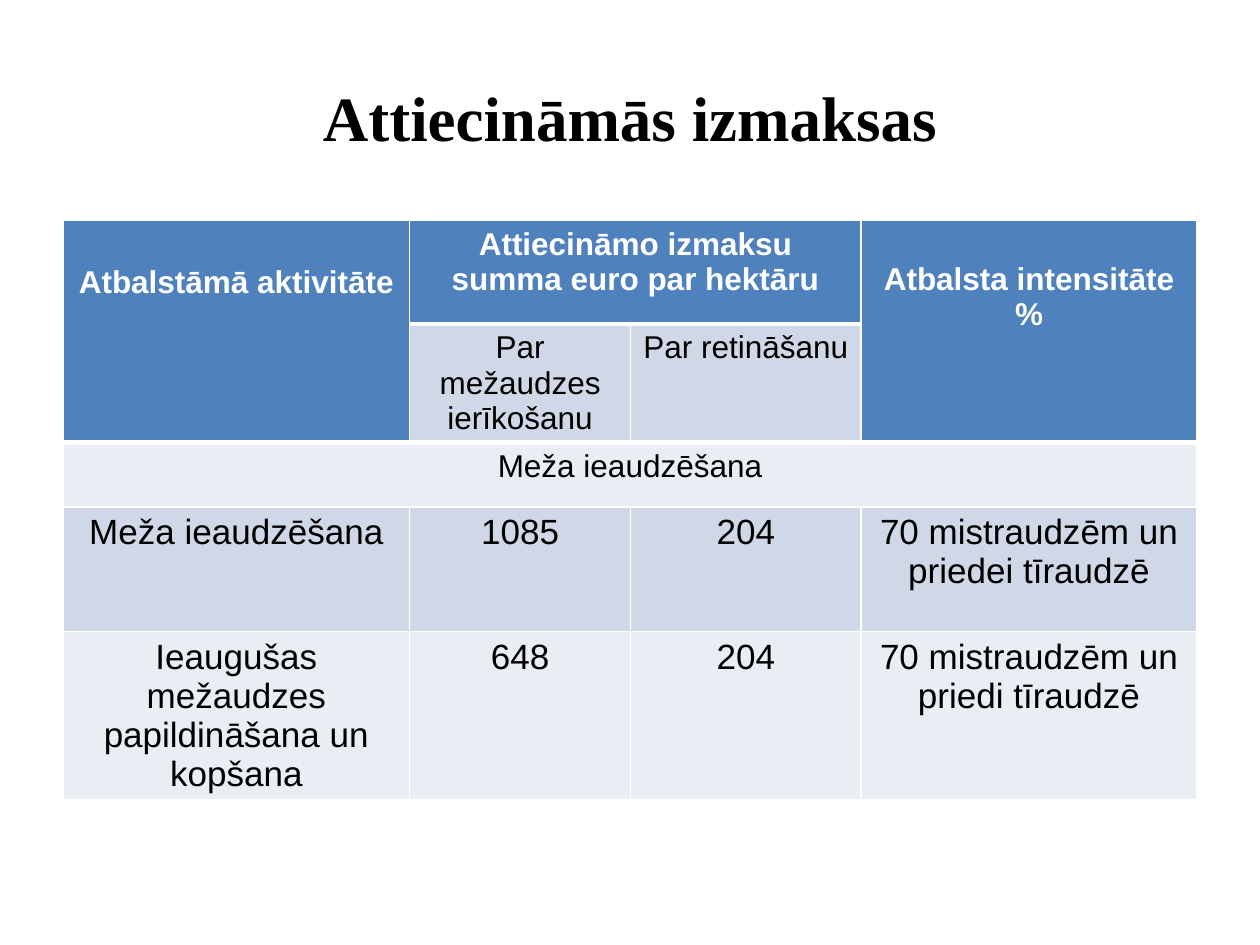
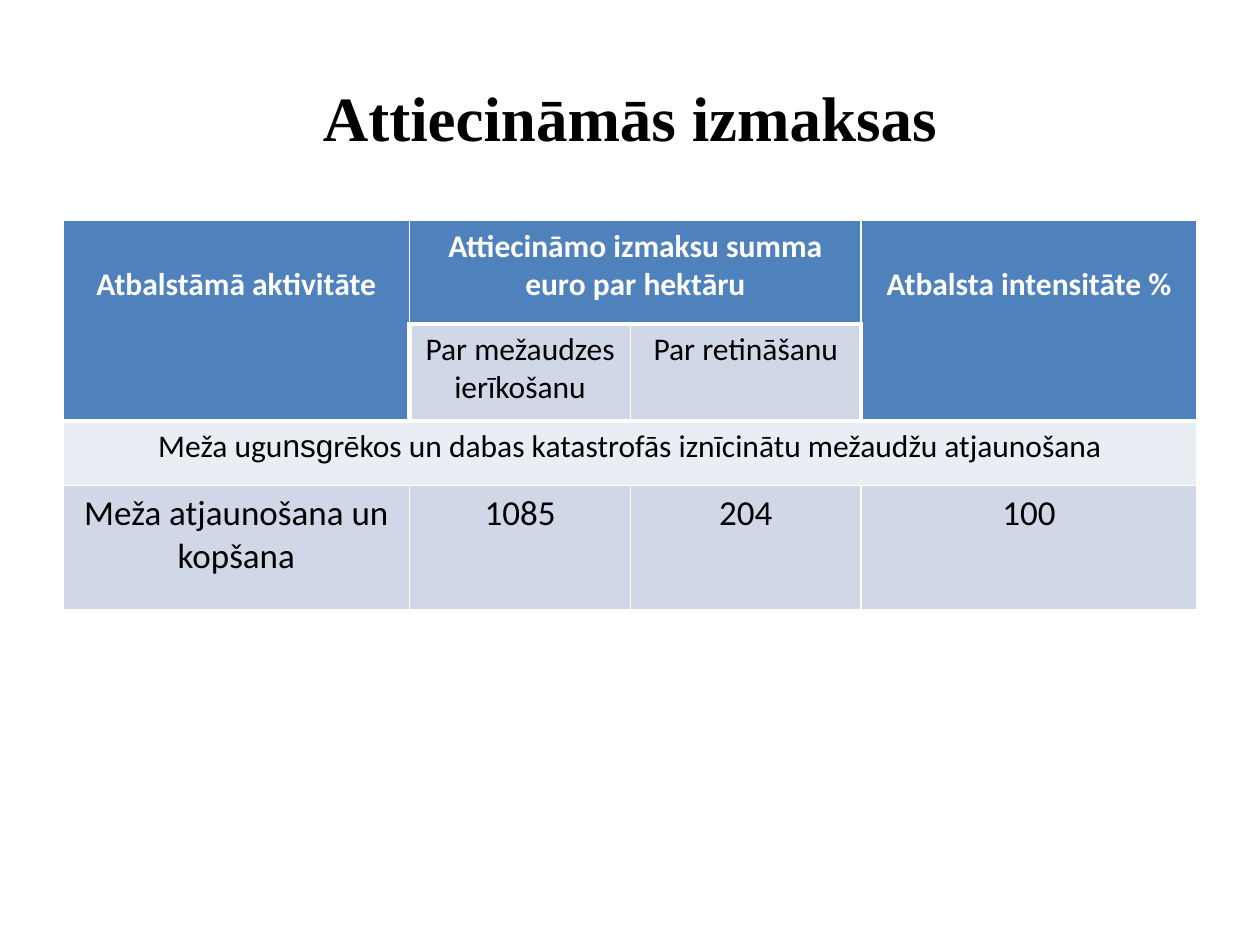
from lxml import etree
from pptx import Presentation
from pptx.dml.color import RGBColor
from pptx.enum.text import MSO_ANCHOR, PP_ALIGN
from pptx.oxml.ns import qn
from pptx.util import Cm, Pt

CENTER, MIDDLE = PP_ALIGN.CENTER, MSO_ANCHOR.MIDDLE

TITLE = "Attiecināmās izmaksas"
HEADINGS = {
    (0, 0): "Atbalstāmā aktivitāte",
    (0, 1): "Attiecināmo izmaksu summa euro par hektāru",
    (0, 3): "Atbalsta intensitāte %",
    (1, 1): "Par mežaudzes ierīkošanu",
    (1, 2): "Par retināšanu",
}
# section is a list of (text, font); activity_rows follow it in the table
COST_TABLES = [
    {
        "font": "Arial",
        "section": [("Meža ieaudzēšana", "Arial")],
        "activity_rows": [
            ("Meža ieaudzēšana", "1085", "204", "70 mistraudzēm un priedei tīraudzē"),
            ("Ieaugušas mežaudzes papildināšana un kopšana", "648", "204",
             "70 mistraudzēm un priedi tīraudzē"),
        ],
        "heading_drop": {0: 0.89, 3: 0.83},
        "thick_sides": False,
    },
    {
        "font": "Calibri",
        "section": [
            ("Meža ugu", "Calibri"),
            ("nsg", "Arial"),
            ("rēkos un dabas katastrofās iznīcinātu mežaudžu atjaunošana", "Calibri"),
        ],
        "activity_rows": [("Meža atjaunošana un kopšana", "1085", "204", "100")],
        "heading_drop": {0: 0.91, 3: 0.91},
        "thick_sides": True,
    },
]

COLORS = {"heading": "4F81BD", "dark_band": "D0D8E8", "light_band": "E9EDF4",
          "white": "FFFFFF", "black": "000000"}
COLUMN_WIDTHS = [6.99, 4.45, 4.65, 6.77]
ROW_HEIGHTS = [2.08, 1.96, 1.3, 2.51, 2.41]
LEFT, WIDTH = 1.27, sum(COLUMN_WIDTHS)
TITLE_TOP, TITLE_HEIGHT, TABLE_TOP = 0.76, 3.18, 4.45
MERGES = [((0, 0), (1, 0)), ((0, 1), (0, 2)), ((0, 3), (1, 3)), ((2, 0), (2, 3))]
SECTION_ROW = 2
THIN, THICK = 1, 3


def write_runs(paragraph, runs, size, color, bold):
    paragraph.alignment = CENTER
    for text, font_name in runs:
        run = paragraph.add_run()
        run.text = text
        for attribute, value in {"name": font_name, "size": Pt(size), "bold": bold}.items():
            setattr(run.font, attribute, value)
        run.font.color.rgb = RGBColor.from_string(COLORS[color])


def is_heading(row, column):
    return row == 0 or (row == 1 and column in (0, 3))


def band_of(row, column):
    if is_heading(row, column):
        return "heading"
    return "dark_band" if row % 2 else "light_band"


def border_widths(row, column, thick_sides):
    """Widths in points, in the order the cell properties need."""
    beside_heading = thick_sides and row == 1
    return {
        "lnL": THICK if beside_heading and column == 1 else THIN,
        "lnR": THICK if beside_heading and column == 2 else THIN,
        "lnT": THICK if row == SECTION_ROW or (row == 1 and column in (1, 2)) else THIN,
        "lnB": THICK if is_heading(row, column) else THIN,
    }


def draw_borders(cell, widths):
    properties = cell._tc.get_or_add_tcPr()
    for position, (side, width) in enumerate(widths.items()):
        line = etree.Element(qn(f"a:{side}"), w=str(Pt(width)))
        fill = etree.SubElement(line, qn("a:solidFill"))
        etree.SubElement(fill, qn("a:srgbClr"), val=COLORS["white"])
        properties.insert(position, line)


def add_title(slide):
    title = slide.shapes.title
    box = {"left": LEFT, "top": TITLE_TOP, "width": WIDTH, "height": TITLE_HEIGHT}
    for attribute, value in box.items():
        setattr(title, attribute, Cm(value))
    title.text_frame.vertical_anchor = MIDDLE
    write_runs(title.text_frame.paragraphs[0], [(TITLE, "Times New Roman")], 36, "black", True)


def add_cost_table(slide, costs):
    heights = ROW_HEIGHTS[:SECTION_ROW + 1 + len(costs["activity_rows"])]
    table = slide.shapes.add_table(
        len(heights), len(COLUMN_WIDTHS),
        Cm(LEFT), Cm(TABLE_TOP), Cm(WIDTH), Cm(sum(heights))).table
    for column, width in zip(table.columns, COLUMN_WIDTHS):
        column.width = Cm(width)
    for row, height in zip(table.rows, heights):
        row.height = Cm(height)
    for first, last in MERGES:
        table.cell(*first).merge(table.cell(*last))

    contents = {place: [(text, costs["font"])] for place, text in HEADINGS.items()}
    contents[SECTION_ROW, 0] = costs["section"]
    for row, values in enumerate(costs["activity_rows"], SECTION_ROW + 1):
        for column, value in enumerate(values):
            contents[row, column] = [(value, costs["font"])]

    for row in range(len(heights)):
        for column in range(len(COLUMN_WIDTHS)):
            cell = table.cell(row, column)
            cell.fill.solid()
            cell.fill.fore_color.rgb = RGBColor.from_string(COLORS[band_of(row, column)])
            draw_borders(cell, border_widths(row, column, costs["thick_sides"]))
            if (row, column) in contents:
                heading = is_heading(row, column)
                write_runs(cell.text_frame.paragraphs[0], contents[row, column],
                           20 if row > SECTION_ROW else 18,
                           "white" if heading else "black", heading)
    for column, drop in costs["heading_drop"].items():
        table.cell(0, column).margin_top = Cm(drop)


def main():
    presentation = Presentation()
    presentation.slide_width, presentation.slide_height = Cm(25.4), Cm(19.05)
    title_only = presentation.slide_layouts.get_by_name("Title Only")
    for costs in COST_TABLES:
        slide = presentation.slides.add_slide(title_only)
        add_title(slide)
        add_cost_table(slide, costs)
    presentation.save("out.pptx")


if __name__ == "__main__":
    main()
